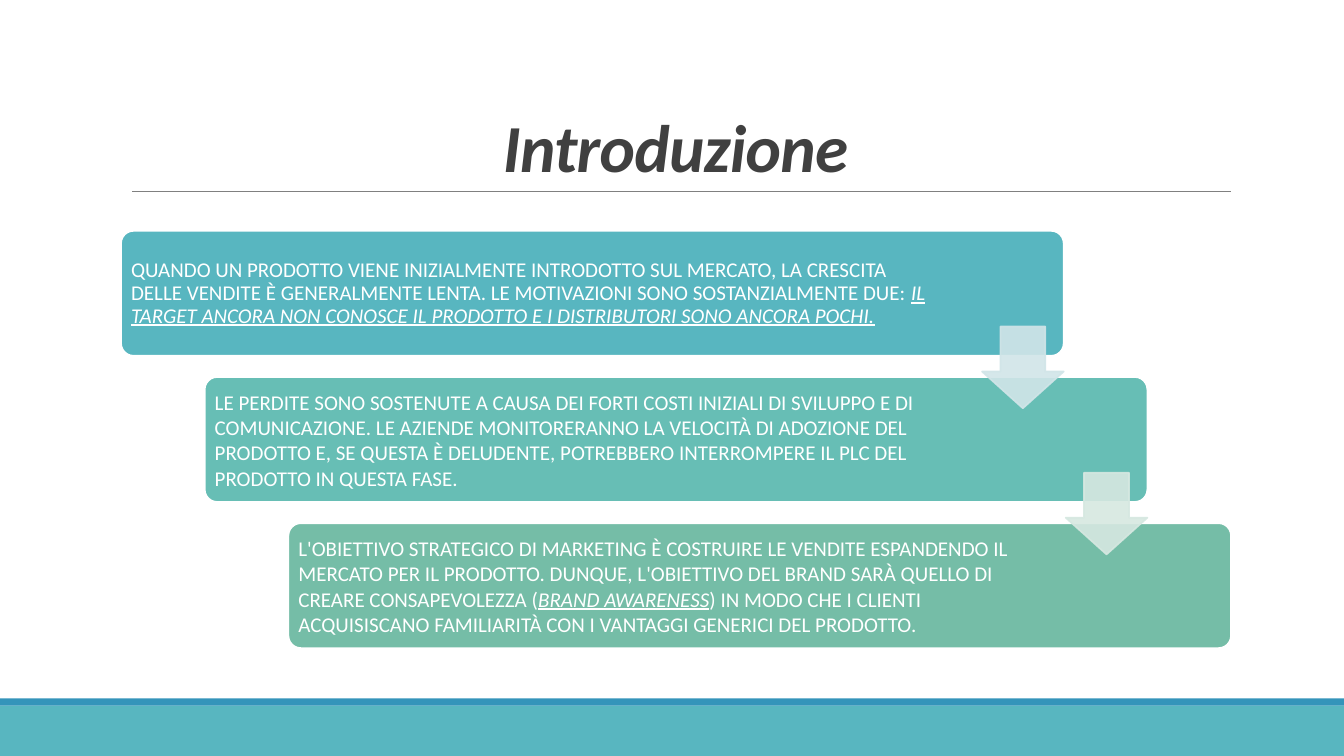
"""Build the "Introduzione" slide: three stepped cards linked by arrows."""
from dataclasses import dataclass

import pptx
import pptx.dml.color
import pptx.enum.shapes
import pptx.enum.text
import pptx.oxml
import pptx.oxml.ns
import pptx.util
from pptx.util import Inches

SHAPE = pptx.enum.shapes.MSO_SHAPE
ANCHOR = pptx.enum.text.MSO_ANCHOR
ALIGN = pptx.enum.text.PP_ALIGN
STEP_X, STEP_Y = 0.83, 1.45
BODY = {"name": "Calibri", "size": pptx.util.Pt(15)}
STRONG = {**BODY, "italic": True, "underline": True}
HEAD = {"name": "Calibri", "size": pptx.util.Pt(48), "bold": True, "italic": True}


@dataclass
class Piece:
    text: str
    form: dict


@dataclass
class Card:
    fill: str
    width: float
    space: float
    words: list[Piece]


@dataclass
class Band:
    top: float
    height: float
    fill: str


BANDS = [Band(7, 0.5, "58B6C0"), Band(6.93, 0.07, "3494BA")]
ARROWS = ["D1E5E8", "D6E8E1"]
CARDS = [
    Card("58B6C0", 8.01, 0.9, [
        Piece("QUANDO UN PRODOTTO VIENE INIZIALMENTE INTRODOTTO SUL MERCATO, LA CRESCITA "
              "DELLE VENDITE È GENERALMENTE LENTA. LE MOTIVAZIONI SONO SOSTANZIALMENTE DUE: ", BODY),
        Piece("IL TARGET ANCORA NON CONOSCE IL PRODOTTO E I DISTRIBUTORI SONO ANCORA POCHI.", STRONG),
    ]),
    Card("67BEB5", 7.64, 1.0, [
        Piece("LE PERDITE SONO SOSTENUTE A CAUSA DEI FORTI COSTI INIZIALI DI SVILUPPO E DI "
              "COMUNICAZIONE. LE AZIENDE MONITORERANNO LA VELOCITÀ DI ADOZIONE DEL PRODOTTO E, "
              "SE QUESTA È DELUDENTE, POTREBBERO INTERROMPERE IL PLC DEL PRODOTTO IN QUESTA FASE.", BODY),
    ]),
    Card("75BDA7", 7.64, 1.0, [
        Piece("L'OBIETTIVO STRATEGICO DI MARKETING È COSTRUIRE LE VENDITE ESPANDENDO IL MERCATO "
              "PER IL PRODOTTO. DUNQUE, L'OBIETTIVO DEL BRAND SARÀ QUELLO DI CREARE "
              "CONSAPEVOLEZZA (", BODY),
        Piece("BRAND AWARENESS", STRONG),
        Piece(") IN MODO CHE I CLIENTI ACQUISISCANO FAMILIARITÀ CON I VANTAGGI GENERICI "
              "DEL PRODOTTO.", BODY),
    ]),
]


def paint(form, color: str) -> None:
    form.rgb = pptx.dml.color.RGBColor.from_string(color)


def add_box(slide, kind, box: tuple, fill: str, edge: str = "", adjust: tuple = ()):
    shape = slide.shapes.add_shape(kind, *map(Inches, box))
    shape.shadow.inherit = False
    shape.fill.solid()
    paint(shape.fill.fore_color, fill)
    if edge:
        paint(shape.line.color, edge)
        shape.line.width = pptx.util.Pt(1.25)
    else:
        shape.line.fill.background()
    for spot, value in enumerate(adjust):
        shape.adjustments[spot] = value
    return shape


def add_text(slide, box: tuple, words: list[Piece], color: str, frame: dict, para: dict):
    text = slide.shapes.add_textbox(*map(Inches, box)).text_frame
    line = text.paragraphs[0]
    for target, form in ((text, {"word_wrap": True, **frame}), (line, para)):
        for key, value in form.items():
            setattr(target, key, value)
    for piece in words:
        run = line.add_run()
        run.text = piece.text
        for key, value in piece.form.items():
            setattr(run.font, key, value)
        paint(run.font.color, color)
    return line


def add_rule(slide) -> None:
    rule = slide.shapes.add_connector(
        pptx.enum.shapes.MSO_CONNECTOR.STRAIGHT, *map(Inches, (1.31, 1.9, 12.21, 1.9)))
    paint(rule.line.color, "808080")
    rule.line.width = pptx.util.Pt(0.5)
    props = rule._element.spPr
    props.append(pptx.oxml.parse_xml(f"<a:effectLst {pptx.oxml.ns.nsdecls('a')}/>"))


def add_title(slide) -> None:
    line = add_text(slide, (1.2, 0.31, 11, 1.59), [Piece("Introduzione", HEAD)], "404040",
                    {"vertical_anchor": ANCHOR.BOTTOM},
                    {"alignment": ALIGN.CENTER, "line_spacing": 0.85})
    line.runs[0]._r.get_or_add_rPr().set("spc", "-50")


def add_card(slide, card: Card, index: int) -> None:
    left, top = 1.2 + index * STEP_X, 2.29 + index * STEP_Y
    add_box(slide, SHAPE.ROUNDED_RECTANGLE, (left, top, 9.35, 1.24), card.fill, "FFFFFF", (0.1,))
    sides = ("left", "top", "right", "bottom")
    frame = {f"margin_{side}": Inches(0.06) for side in sides}
    add_text(slide, (left + 0.04, top + 0.04, card.width, 1.17), card.words, "FFFFFF",
             {"vertical_anchor": ANCHOR.MIDDLE, **frame}, {"line_spacing": card.space})


def add_arrow(slide, color: str, index: int) -> None:
    box = (9.74 + index * STEP_X, 3.24 + index * STEP_Y, 0.81, 0.81)
    arrow = add_box(slide, SHAPE.DOWN_ARROW, box, color, color, (0.55, 0.45))
    for tone in arrow._element.spPr.iter(pptx.oxml.ns.qn("a:srgbClr")):
        tone.append(pptx.oxml.parse_xml(
            f"<a:alpha {pptx.oxml.ns.nsdecls('a')} val='90000'/>"))


def main() -> None:
    deck = pptx.Presentation()
    deck.slide_width, deck.slide_height = Inches(13.33), Inches(7.5)
    slide = deck.slides.add_slide(deck.slide_layouts[6])
    for band in BANDS:
        add_box(slide, SHAPE.RECTANGLE, (0, band.top, 13.33, band.height), band.fill)
    add_rule(slide)
    add_title(slide)
    for index, card in enumerate(CARDS):
        add_card(slide, card, index)
    for index, color in enumerate(ARROWS):
        add_arrow(slide, color, index)
    deck.save("out.pptx")


if __name__ == "__main__":
    main()
